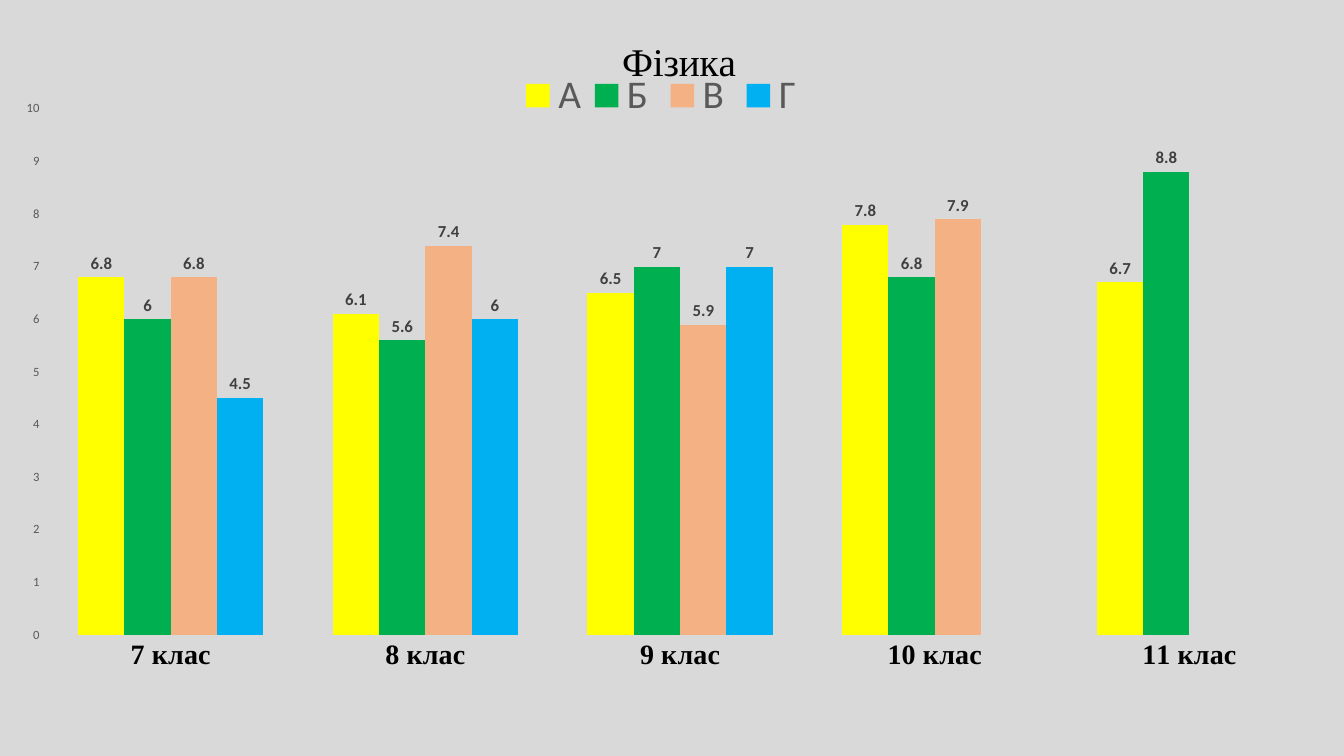
from lxml.etree import SubElement as Sub
from pptx import Presentation
from pptx.chart.data import CategoryChartData as Data
from pptx.dml.color import RGBColor as RGB
from pptx.enum.chart import XL_CHART_TYPE as Kind, XL_LABEL_POSITION as Spot
from pptx.enum.chart import XL_LEGEND_POSITION as Side, XL_TICK_MARK as Tick
from pptx.oxml.ns import qn
from pptx.util import Inches, Pt

COLORS = {
    "back": "D9D9D9", "black": "000000", "gray": "595959", "dark": "404040",
    "А": "FFFF00", "Б ": "00B050", "В ": "F4B183", "Г": "00B0F0",
}
GRADES = ["7 клас", "8 клас", "9 клас", "10 клас", "11 клас"]
MARKS = {
    "А": (6.8, 6.1, 6.5, 7.8, 6.7),
    "Б ": (6, 5.6, 7, 6.8, 8.8),
    "В ": (6.8, 7.4, 5.9, 7.9, None),
    "Г": (4.5, 6, 7, None, None),
}
SERIF = "Times New Roman"
WIDE, HIGH = 13.33, 7.5


class Deck:
    """Holds the style and the current slide."""

    def __init__(self, font="Calibri"):
        self.font = font
        self.prs = Presentation()
        self.prs.slide_width, self.prs.slide_height = Inches(WIDE), Inches(HIGH)
        self.slide = self.prs.slides.add_slide(self.prs.slide_layouts[6])
        self.paint(self.slide.background.fill, "back")

    def paint(self, fill, color):
        fill.solid()
        fill.fore_color.rgb = RGB.from_string(COLORS[color])

    def style(self, font, size, color, bold=False, name=None):
        form = {"size": Pt(size), "bold": bold, "name": name or self.font}
        for key, val in form.items():
            setattr(font, key, val)
        font.color.rgb = RGB.from_string(COLORS[color])

    def place(self, node, index, inner=False, **box):
        """Fix a chart part at the given lengths in inches."""
        for old in node.findall(qn("c:layout")):
            node.remove(old)
        frame = node.makeelement(qn("c:layout"), {})
        node.insert(index, frame)
        man = Sub(frame, qn("c:manualLayout"))
        rows = [("layoutTarget", "inner")] if inner else []
        rows += [("xMode", "edge"), ("yMode", "edge")]
        rows += [(key, f"{val / (WIDE if key in 'xw' else HIGH):.4f}")
                 for key, val in box.items()]
        for key, val in rows:
            Sub(man, qn("c:" + key), val=val)

    def chart(self, cats, rows):
        data = Data()
        data.categories = cats
        for name, vals in rows.items():
            data.add_series(name, vals)
        chart = self.slide.shapes.add_chart(
            Kind.COLUMN_CLUSTERED, 0, 0, Inches(WIDE), Inches(HIGH), data).chart
        self.style(chart.font, 10, "black")
        plot = chart.plots[0]
        plot.gap_width, plot.overlap, plot.vary_by_categories = 150, 0, False
        self.place(plot._element.getparent(), 0, True, x=0.43, y=1.08, w=12.63, h=5.22)
        for bars in plot.series:
            self.bars(bars)
        return chart

    def bars(self, bars):
        self.paint(bars.format.fill, bars.name)
        bars.invert_if_negative = False
        labels = bars.data_labels
        labels.show_value, labels.position = True, Spot.OUTSIDE_END
        self.style(labels.font, 12, "dark", True)

    def axis(self, axis, *look):
        form = {"major_tick_mark": Tick.NONE, "minor_tick_mark": Tick.NONE,
                "has_major_gridlines": False}
        for key, val in form.items():
            setattr(axis, key, val)
        axis.format.line.fill.background()
        self.style(axis.tick_labels.font, *look)

    def title(self, chart, text):
        chart.has_title = True
        title = chart.chart_title
        title.text_frame.text = text
        self.style(title.text_frame.paragraphs[0].runs[0].font, 28, "black", name=SERIF)
        title.include_in_layout = False
        self.place(title._element, 1, x=6.1, y=0.3)

    def legend(self, chart):
        chart.has_legend = True
        key = chart.legend
        key.position, key.include_in_layout = Side.BOTTOM, False
        self.style(key.font, 28, "gray")
        self.place(key._element, 1, x=5.08, y=0.7, w=2.95, h=0.5)


def main():
    deck = Deck()

    # Columns by grade and class
    chart = deck.chart(GRADES, MARKS)

    # Axes
    deck.axis(chart.category_axis, 20, "black", True, SERIF)
    scale = chart.value_axis
    deck.axis(scale, 9, "gray")
    for key, val in {"minimum_scale": 0, "maximum_scale": 10, "major_unit": 1}.items():
        setattr(scale, key, val)

    # Title and legend
    deck.title(chart, "Фізика")
    deck.legend(chart)

    deck.prs.save("out.pptx")


if __name__ == "__main__":
    main()
